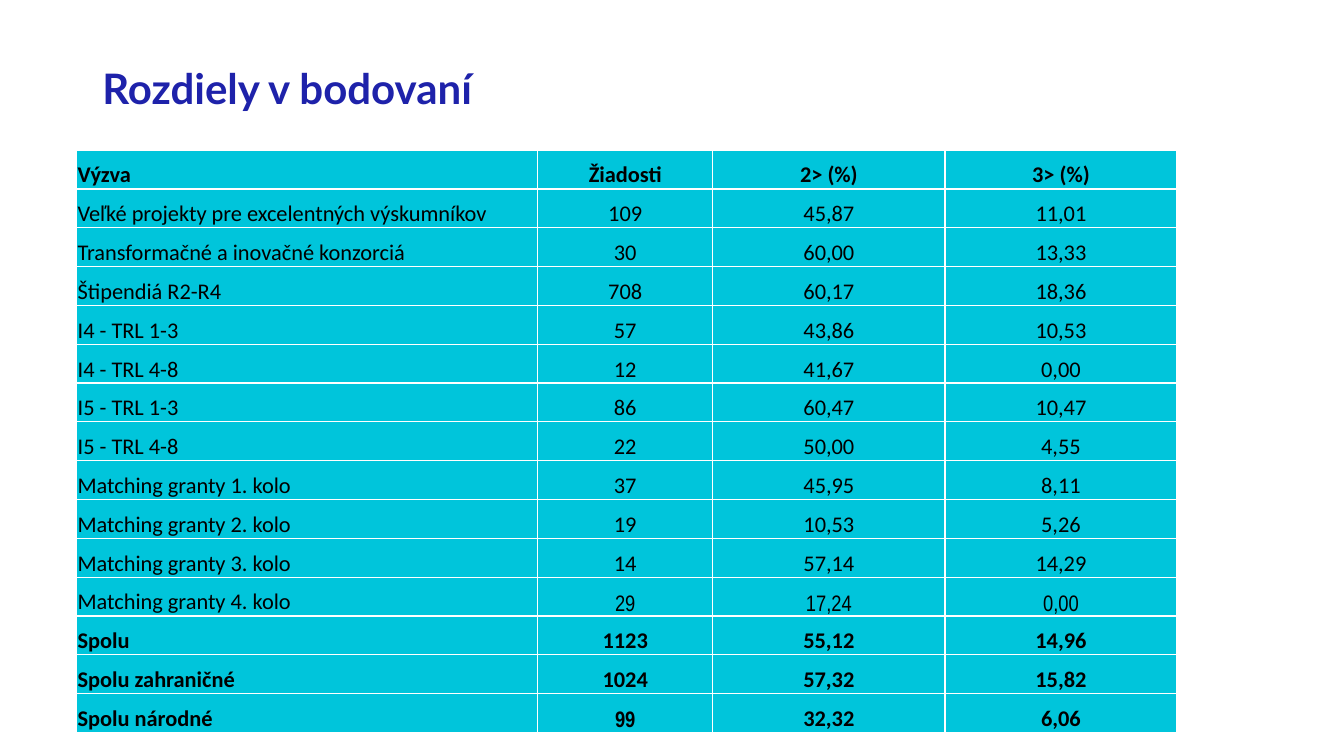
from lxml import etree
from pptx import Presentation
from pptx import util as u
from pptx.dml.color import RGBColor
from pptx.enum import text
from pptx.oxml.ns import qn

PX = 9525  # EMU per pixel
COLORS = {"title": "1E22AA", "cell": "00C5DB", "text": "000000", "border": "FFFFFF"}
COLUMN_WIDTHS = [439, 167, 221, 221]
ROW_HEIGHT = 37
SCORES = [
    ("Výzva", "Žiadosti", "2> (%)", "3> (%)"),
    ("Veľké projekty pre excelentných výskumníkov", "109", "45,87", "11,01"),
    ("Transformačné a inovačné konzorciá", "30", "60,00", "13,33"),
    ("Štipendiá R2-R4", "708", "60,17", "18,36"),
    ("I4 - TRL 1-3", "57", "43,86", "10,53"),
    ("I4 - TRL 4-8", "12", "41,67", "0,00"),
    ("I5 - TRL 1-3", "86", "60,47", "10,47"),
    ("I5 - TRL 4-8", "22", "50,00", "4,55"),
    ("Matching granty 1. kolo", "37", "45,95", "8,11"),
    ("Matching granty 2. kolo", "19", "10,53", "5,26"),
    ("Matching granty 3. kolo", "14", "57,14", "14,29"),
    ("Matching granty 4. kolo", "29", "17,24", "0,00"),
    ("Spolu", "1123", "55,12", "14,96"),
    ("Spolu zahraničné", "1024", "57,32", "15,82"),
    ("Spolu národné", "99", "32,32", "6,06"),
]
BOLD_ROWS = {0, 12, 13, 14}
NARROW_CELLS = {(11, 1), (11, 2), (11, 3), (14, 1)}


def px(*lengths):
    return [u.Emu(length * PX) for length in lengths]


def set_font(paragraph, family, size, color, bold):
    font = paragraph.font
    font.name, font.size, font.bold = family, u.Pt(size), bold
    font.color.rgb = RGBColor.from_string(COLORS[color])


def add_title(slide, wording):
    frame = slide.shapes.add_textbox(*px(88, 60, 878, 82)).text_frame
    frame.word_wrap = True
    heading = frame.paragraphs[0]
    heading.text = wording
    heading.line_spacing = 0.9
    set_font(heading, "Lato", 30, "title", True)


def add_borders(cell):
    """Put the four border lines ahead of the fill, as the schema requires."""
    properties = cell._tc.get_or_add_tcPr()
    for position, side in enumerate(("lnL", "lnR", "lnT", "lnB")):
        line = etree.Element(qn(f"a:{side}"), w=str(u.Pt(1)))
        fill = etree.SubElement(line, qn("a:solidFill"))
        etree.SubElement(fill, qn("a:srgbClr"), val=COLORS["border"])
        properties.insert(position, line)


def fill_cell(cell, wording, family, bold, centered):
    cell.margin_left, cell.margin_right, cell.margin_top, cell.margin_bottom = px(1, 1, 1, 0)
    cell.vertical_anchor = text.MSO_ANCHOR.BOTTOM
    cell.fill.solid()
    cell.fill.fore_color.rgb = RGBColor.from_string(COLORS["cell"])
    add_borders(cell)
    paragraph = cell.text_frame.paragraphs[0]
    paragraph.text = wording
    paragraph.alignment = text.PP_ALIGN.CENTER if centered else text.PP_ALIGN.LEFT
    set_font(paragraph, family, 16, "text", bold)


def add_score_table(slide):
    size = px(73, 143, sum(COLUMN_WIDTHS), ROW_HEIGHT * len(SCORES))
    table = slide.shapes.add_table(len(SCORES), len(COLUMN_WIDTHS), *size).table
    for column, width in zip(table.columns, px(*COLUMN_WIDTHS)):
        column.width = width
    for r, row in enumerate(SCORES):
        for c, wording in enumerate(row):
            family = "Arial Narrow" if (r, c) in NARROW_CELLS else "Calibri"
            fill_cell(table.cell(r, c), wording, family, r in BOLD_ROWS, c > 0)


def main():
    deck = Presentation()
    deck.slide_width, deck.slide_height = px(1280, 720)
    slide = deck.slides.add_slide(deck.slide_layouts[6])
    add_title(slide, "Rozdiely v bodovaní")
    add_score_table(slide)
    deck.save("out.pptx")


if __name__ == "__main__":
    main()
